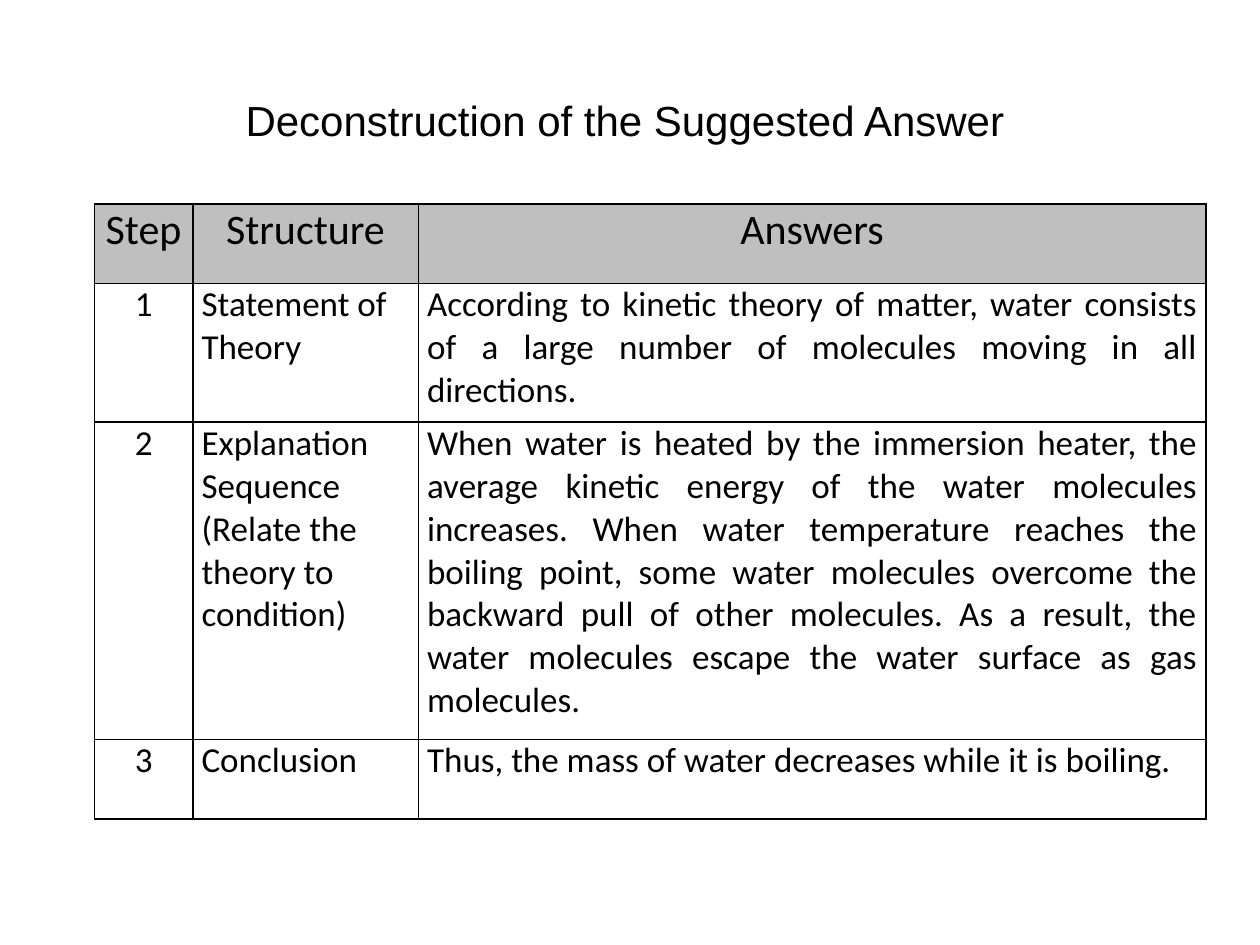
from dataclasses import dataclass

from lxml import etree
from pptx import Presentation
from pptx.dml.color import RGBColor
from pptx.enum import text
from pptx.oxml import ns
from pptx.util import Inches, Pt

COLORS = {"ink": "000000", "header": "BFBFBF"}
COLUMN_WIDTHS = (0.78, 1.79, 6.25)
ALIGN = text.PP_ALIGN


@dataclass(frozen=True)
class Step:
    height: float
    entries: tuple[str, str, str]
    size: int = 20
    aligns: tuple = (ALIGN.CENTER, ALIGN.LEFT, ALIGN.JUSTIFY)
    fill: str | None = None


STEPS = (
    Step(0.63, ("Step", "Structure", "Answers"), 24, (ALIGN.CENTER,) * 3, "header"),
    Step(1.1, (
        "1",
        "Statement of Theory",
        "According to kinetic theory of matter, water consists of a large number "
        "of molecules moving in all directions.",
    )),
    Step(2.52, (
        "2",
        "Explanation Sequence\n(Relate the theory to condition)",
        "When water is heated by the immersion heater, the average kinetic energy "
        "of the water molecules increases. When water temperature reaches the "
        "boiling point, some water molecules overcome the backward pull of other "
        "molecules. As a result, the water molecules escape the water surface as "
        "gas molecules.",
    )),
    Step(0.63, (
        "3",
        "Conclusion",
        "Thus, the mass of water decreases while it is boiling.",
    )),
)


def style_paragraph(paragraph, font: str, size: int, align) -> None:
    paragraph.alignment = align
    paragraph.font.name = font
    paragraph.font.size = Pt(size)
    paragraph.font.color.rgb = RGBColor.from_string(COLORS["ink"])


def add_borders(cell) -> None:
    properties = cell._tc.get_or_add_tcPr()
    for side in ("a:lnL", "a:lnR", "a:lnT", "a:lnB"):
        line = etree.SubElement(properties, ns.qn(side), w=str(Pt(1)))
        solid = etree.SubElement(line, ns.qn("a:solidFill"))
        etree.SubElement(solid, ns.qn("a:srgbClr"), val=COLORS["ink"])


def fill_cell(cell, entry: str, align, step: Step) -> None:
    cell.margin_left = cell.margin_right = Inches(0.07)
    cell.margin_top = cell.margin_bottom = 0
    cell.text = entry
    for paragraph in cell.text_frame.paragraphs:
        style_paragraph(paragraph, "Calibri", step.size, align)
    add_borders(cell)
    if step.fill:
        cell.fill.solid()
        cell.fill.fore_color.rgb = RGBColor.from_string(COLORS[step.fill])
    else:
        cell.fill.background()


def add_title(slide) -> None:
    title = slide.shapes.add_textbox(
        Inches(1.85), Inches(0.7), Inches(6.38), Inches(0.5)).text_frame
    title.word_wrap = True
    title.auto_size = text.MSO_AUTO_SIZE.SHAPE_TO_FIT_TEXT
    title.text = "Deconstruction of the Suggested Answer"
    style_paragraph(title.paragraphs[0], "Arial", 24, ALIGN.LEFT)


def add_answer_table(slide) -> None:
    answers = slide.shapes.add_table(
        len(STEPS), len(COLUMN_WIDTHS), Inches(0.75), Inches(1.62),
        Inches(sum(COLUMN_WIDTHS)), Inches(sum(step.height for step in STEPS))).table
    answers.first_row = answers.horz_banding = False
    for column, width in zip(answers.columns, COLUMN_WIDTHS):
        column.width = Inches(width)
    for row, step in zip(answers.rows, STEPS):
        row.height = Inches(step.height)
        for cell, entry, align in zip(row.cells, step.entries, step.aligns):
            fill_cell(cell, entry, align, step)


def main() -> None:
    deck = Presentation()
    deck.slide_width, deck.slide_height = Inches(10), Inches(7.5)
    slide = deck.slides.add_slide(deck.slide_layouts[6])
    add_answer_table(slide)
    add_title(slide)
    deck.save("out.pptx")


if __name__ == "__main__":
    main()
